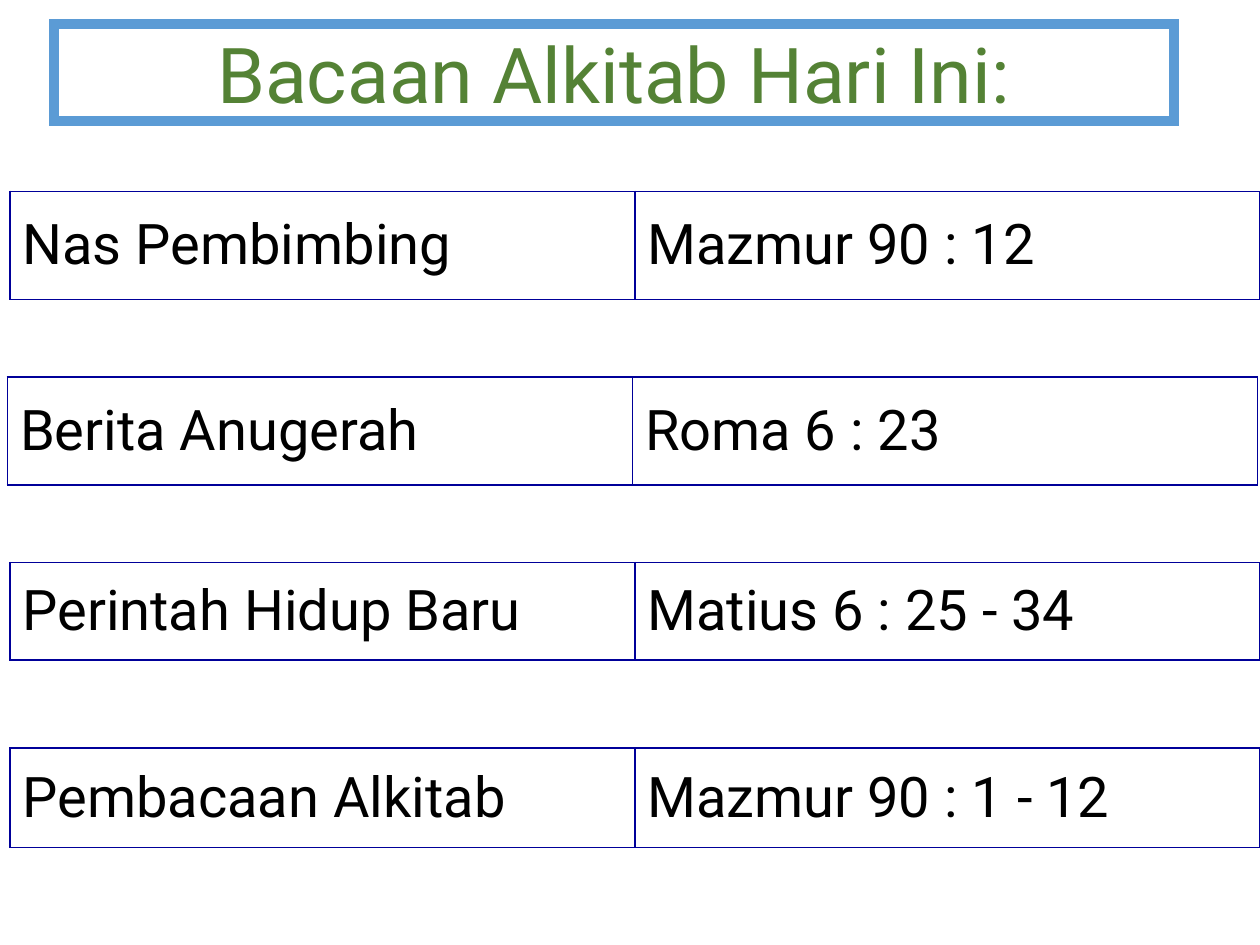
"""Build the slide that lists today's Bible readings."""
from dataclasses import dataclass

from lxml import etree
from pptx import Presentation
from pptx import util as u
from pptx.dml.color import RGBColor
from pptx.enum import text
from pptx.oxml import parse_xml
from pptx.oxml.ns import nsdecls, qn


@dataclass(frozen=True)
class Theme:
    font: str = "Roboto"
    title_size: int = 44
    cell_size: int = 32
    title: str = "548235"
    ink: str = "000000"
    paper: str = "FFFFFF"
    frame: str = "5B9BD5"
    grid: str = "000099"


@dataclass(frozen=True)
class Reading:
    label: str
    passage: str
    height: float
    left: float = 0.2


THEME = Theme()
FIRST_TOP, STEP, COLUMN_WIDTH = 3.86, 3.74, 12.6
READINGS = (
    Reading("Nas Pembimbing", "Mazmur 90 : 12", 2.18),
    Reading("Berita Anugerah", "Roma 6 : 23", 2.18, left=0.15),
    Reading("Perintah Hidup Baru", "Matius 6 : 25 - 34", 1.96),
    Reading("Pembacaan Alkitab", "Mazmur 90 : 1 - 12", 2.01),
)


def line_xml(tag: str, points: float, colour: str):
    """Return a solid line element with the given tag."""
    return parse_xml(
        f'<a:{tag} {nsdecls("a")} w="{u.Pt(points)}"><a:solidFill>'
        f'<a:srgbClr val="{colour}"/></a:solidFill></a:{tag}>'
    )


def fill_paper(fill, properties, opacity: int) -> None:
    """Fill with the paper colour at an opacity in percent."""
    fill.solid()
    fill.fore_color.rgb = RGBColor.from_string(THEME.paper)
    colour = properties.find(qn("a:solidFill")).find(qn("a:srgbClr"))
    etree.SubElement(colour, qn("a:alpha"), val=str(opacity * 1000))


def add_span(para, words: str, size: int, colour: str):
    """Add one formatted run to a paragraph."""
    span = para.add_run()
    span.text = words
    span.font.name = THEME.font
    span.font.size = u.Pt(size)
    span.font.bold = False
    span.font.color.rgb = RGBColor.from_string(colour)
    return span


def draw_title(page, words: str) -> None:
    """Turn the title placeholder into a framed plaque."""
    box = page.shapes.title
    box.left, box.top, box.width, box.height = map(u.Cm, (1.09, 0.48, 22.58, 1.96))
    properties = box.element.spPr
    properties.append(parse_xml(
        f'<a:prstGeom {nsdecls("a")} prst="plaque"><a:avLst/></a:prstGeom>'
    ))
    fill_paper(box.fill, properties, 97)
    box.line.width = u.Pt(6)
    box.line.color.rgb = RGBColor.from_string(THEME.frame)
    etree.SubElement(properties.find(qn("a:ln")), qn("a:miter"), lim="800000")
    frame = box.text_frame
    frame.word_wrap = True
    frame.auto_size = text.MSO_AUTO_SIZE.NONE
    frame.vertical_anchor = text.MSO_ANCHOR.MIDDLE
    para = frame.paragraphs[0]
    para.alignment = text.PP_ALIGN.CENTER
    span = add_span(para, words, THEME.title_size, THEME.title)
    span.font._element.insert(0, line_xml("ln", 0.75, THEME.ink))


def draw_cell(cell, words: str) -> None:
    """Border, fill and write one table cell."""
    properties = cell._tc.get_or_add_tcPr()
    for tag in ("lnL", "lnR", "lnT", "lnB"):
        properties.append(line_xml(tag, 1, THEME.grid))
    fill_paper(cell.fill, properties, 85)
    cell.vertical_anchor = text.MSO_ANCHOR.MIDDLE
    add_span(cell.text_frame.paragraphs[0], words, THEME.cell_size, THEME.ink)


def draw_reading(page, reading: Reading, top: float) -> None:
    """Draw one reading as a table of a label and a passage."""
    table = page.shapes.add_table(
        1, 2, u.Cm(reading.left), u.Cm(top),
        u.Cm(2 * COLUMN_WIDTH), u.Cm(reading.height),
    ).table
    table.first_row = False
    table.horz_banding = False
    for cell, words in zip(table.iter_cells(), (reading.label, reading.passage)):
        draw_cell(cell, words)


def main() -> None:
    """Build and save the deck."""
    deck = Presentation()
    deck.slide_width, deck.slide_height = u.Cm(25.4), u.Cm(19.05)
    page = deck.slides.add_slide(deck.slide_layouts.get_by_name("Title Only"))
    draw_title(page, "Bacaan Alkitab Hari Ini:")
    for index, reading in enumerate(READINGS):
        draw_reading(page, reading, FIRST_TOP + index * STEP)
    deck.save("out.pptx")


if __name__ == "__main__":
    main()
